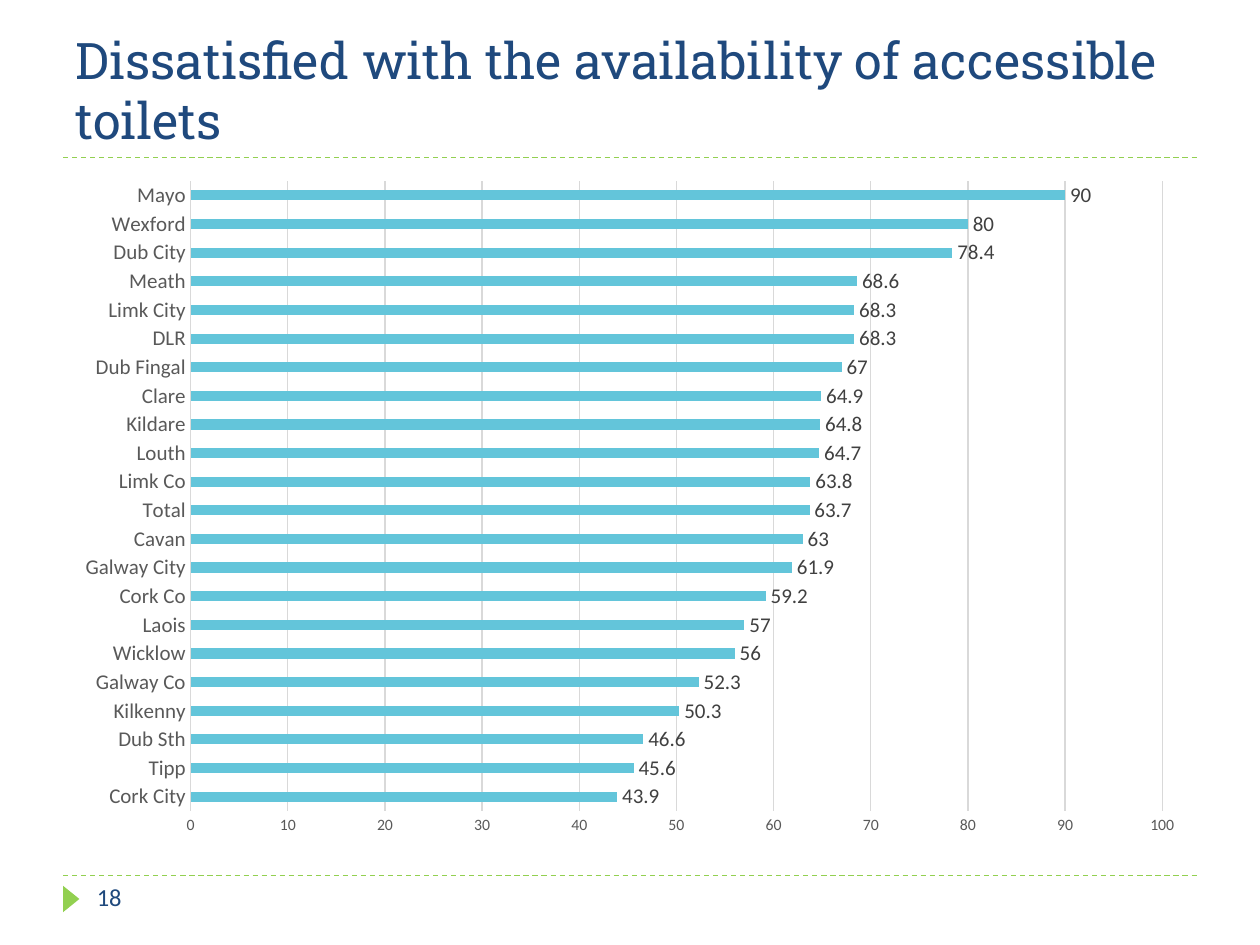
from lxml import etree
from pptx import Presentation
from pptx.chart.data import CategoryChartData
from pptx.dml.color import RGBColor
from pptx.enum.chart import XL_CHART_TYPE as ChartType, XL_LABEL_POSITION as LabelPos, XL_TICK_MARK as Tick
from pptx.enum.dml import MSO_LINE as Dash
from pptx.enum.shapes import MSO_CONNECTOR as Connector, MSO_SHAPE as Shape
from pptx.enum.text import MSO_ANCHOR as Anchor, MSO_AUTO_SIZE as AutoSize, PP_ALIGN as Align
from pptx.oxml.ns import qn
from pptx.util import Inches, Pt

NAVY = RGBColor(0x1F, 0x49, 0x7D)
GREEN = RGBColor(0x92, 0xD0, 0x50)
AQUA = RGBColor(0x63, 0xC5, 0xDA)
WHITE = RGBColor(0xFF, 0xFF, 0xFF)
BLACK = RGBColor(0, 0, 0)
LABEL_GREY = RGBColor(0x40, 0x40, 0x40)
AXIS_GREY = RGBColor(0x59, 0x59, 0x59)
GRID_GREY = RGBColor(0xD9, 0xD9, 0xD9)

DISSATISFIED = {
    "Cork City": 43.9, "Tipp": 45.6, "Dub Sth": 46.6, "Kilkenny": 50.3,
    "Galway Co": 52.3, "Wicklow": 56, "Laois": 57, "Cork Co": 59.2,
    "Galway City": 61.9, "Cavan": 63, "Total": 63.7, "Limk Co": 63.8,
    "Louth": 64.7, "Kildare": 64.8, "Clare": 64.9, "Dub Fingal": 67,
    "DLR": 68.3, "Limk City": 68.3, "Meath": 68.6, "Dub City": 78.4,
    "Wexford": 80, "Mayo": 90,
}
# The two lowest-ranked Wicklow and Laois values follow the ascending order.
DISSATISFIED.update({"Wicklow": 56, "Laois": 57})


def style_font(font, size, color, name="Calibri"):
    font.size, font.name = Pt(size), name
    font.color.rgb = color


def write(frame, text, size=14, color=NAVY, font="Calibri", anchor=Anchor.TOP):
    frame.word_wrap = True
    frame.auto_size = AutoSize.NONE
    frame.vertical_anchor = anchor
    paragraph = frame.paragraphs[0]
    paragraph.alignment = Align.LEFT
    run = paragraph.add_run()
    run.text = text
    style_font(run.font, size, color, font)


class SlideBuilder:
    def __init__(self, slide, heading_font="Roboto Slab", accent=GREEN):
        self.slide = slide
        self.shapes = slide.shapes
        self.heading_font = heading_font
        self.accent = accent

    def rule(self, y, left=0.5, right=9.5):
        rule = self.shapes.add_connector(
            Connector.STRAIGHT, Inches(left), Inches(y), Inches(right), Inches(y))
        rule.line.color.rgb = self.accent
        rule.line.width = Pt(0.75)
        rule.line.dash_style = Dash.DASH
        etree.SubElement(rule._element.spPr, qn("a:effectLst"))

    def marker(self, *box):
        marker = self.shapes.add_shape(Shape.ISOSCELES_TRIANGLE, *map(Inches, box))
        marker.rotation = 90
        marker.shadow.inherit = False
        marker.fill.solid()
        marker.fill.fore_color.rgb = self.accent
        marker.line.fill.background()

    def title(self, text, *box):
        title = self.shapes.title
        title.left, title.top, title.width, title.height = map(Inches, box)
        title.fill.solid()
        title.fill.fore_color.rgb = WHITE
        write(title.text_frame, text, size=28.8, font=self.heading_font, anchor=Anchor.MIDDLE)

    def text(self, text, *box, **style):
        write(self.shapes.add_textbox(*map(Inches, box)).text_frame, text, **style)

    def bar_chart(self, values, *box):
        data = CategoryChartData()
        data.categories = list(values)
        data.add_series("Series 1", list(values.values()))
        chart = self.shapes.add_chart(ChartType.BAR_CLUSTERED, *map(Inches, box), data).chart
        chart.has_legend = chart.has_title = False
        style_font(chart.font, 10, BLACK)

        plot = chart.plots[0]
        plot.gap_width = 182
        plot.vary_by_categories = False
        fill = plot.series[0].format.fill
        fill.solid()
        fill.fore_color.rgb = AQUA
        plot.has_data_labels = True
        labels = plot.data_labels
        labels.show_value = True
        labels.position = LabelPos.OUTSIDE_END
        style_font(labels.font, 12, LABEL_GREY)

        counties, scale = chart.category_axis, chart.value_axis
        for axis, size in ((counties, 12), (scale, 9)):
            axis.major_tick_mark = axis.minor_tick_mark = Tick.NONE
            style_font(axis.tick_labels.font, size, AXIS_GREY)
        scale.minimum_scale, scale.maximum_scale, scale.major_unit = 0, 100, 10
        scale.format.line.fill.background()
        scale.has_major_gridlines = True
        for line in (counties.format.line, scale.major_gridlines.format.line):
            line.color.rgb = GRID_GREY
            line.width = Pt(0.75)


def main():
    deck = Presentation()
    deck.slide_width, deck.slide_height = Inches(10), Inches(7.5)
    page = SlideBuilder(deck.slides.add_slide(deck.slide_layouts[5]))
    page.title("Dissatisfied with the availability of accessible toilets", 0.5, 0.17, 9, 1.08)
    for y in (1.25, 6.95):
        page.rule(y)
    page.marker(0.46, 7.07, 0.21, 0.13)
    page.text("18", 0.67, 6.95, 2.17, 0.4)
    page.bar_chart(DISSATISFIED, 0.5, 1.33, 9, 5.4)
    deck.save("out.pptx")


if __name__ == "__main__":
    main()
